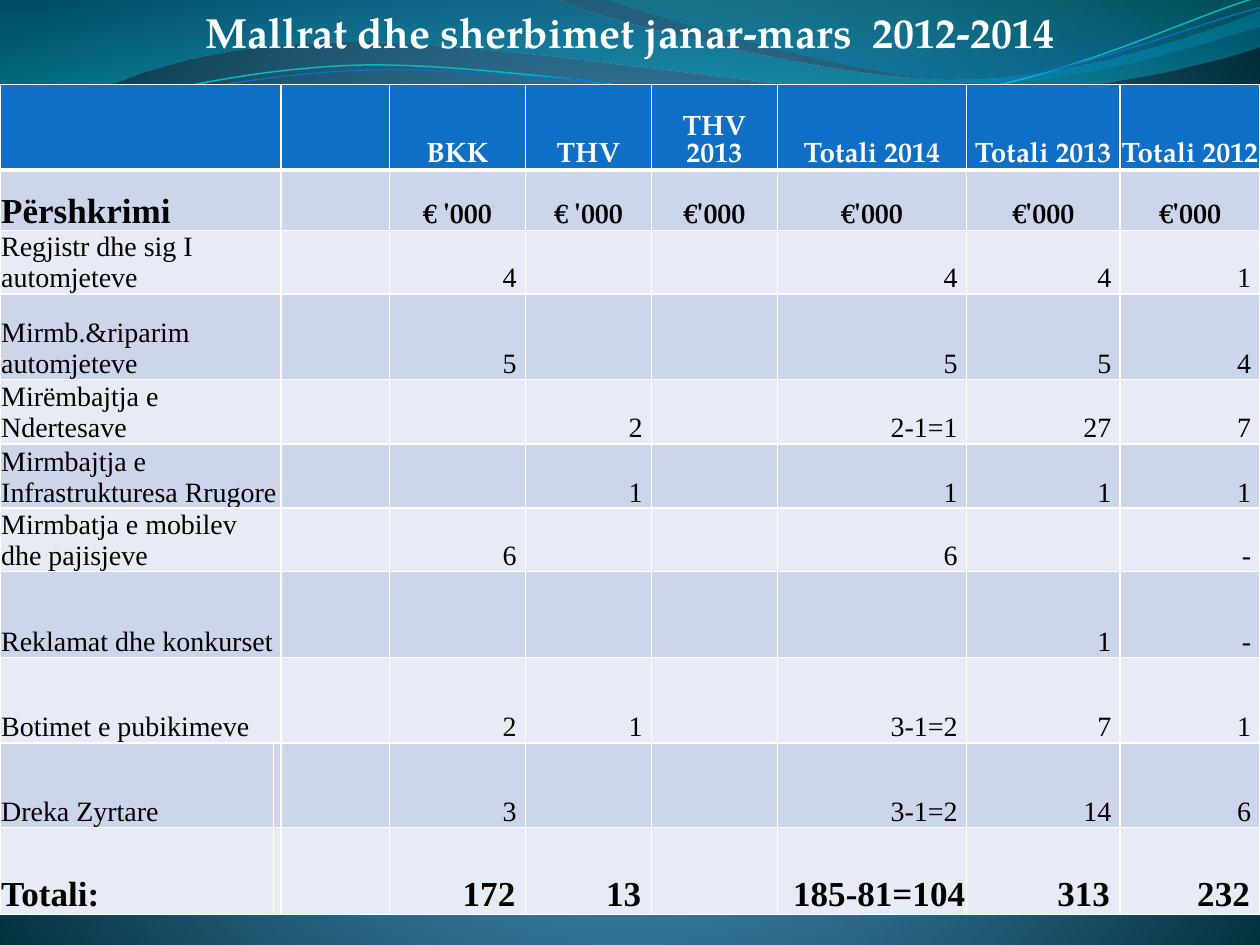
"""Build the slide of goods and services spending, January to March 2012-2014."""
import pptx
import pptx.dml.color
import pptx.enum.text
import pptx.oxml
import pptx.oxml.ns
import pptx.util
from lxml import etree

WIDTH, HEIGHT = 10, 7.5
UNITS_PER_INCH = 1000
HEADING_FONT, BODY_FONT = "TeX Gyre Pagella", "Times New Roman"
HEADER_FILL, BANDS = "0F6FC6", ("E7EBF5", "CCD5EA")
COLUMNS = [2.17, 0.06, 0.86, 1.08, 1, 1, 1.5, 1.22, 1.11]
ROWS = [0.68, 0.48, 0.5, 0.68, 0.51, 0.51, 0.5, 0.68, 0.68, 0.67, 0.69]
LABEL_SPAN_ROWS = 9
SPENDING = [
    ["", "BKK", "THV", "THV 2013", "Totali 2014", "Totali 2013", "Totali 2012"],
    ["Përshkrimi", "€ '000", "€ '000", "€'000", "€'000", "€'000", "€'000"],
    ["Regjistr dhe sig I automjeteve", "4", "", "", "4", "4", "1"],
    ["Mirmb.&riparim automjeteve", "5", "", "", "5", "5", "4"],
    ["Mirëmbajtja e Ndertesave", "", "2", "", "2-1=1", "27", "7"],
    ["Mirmbajtja e Infrastrukturesa Rrugore", "", "1", "", "1", "1", "1"],
    ["Mirmbatja e mobilev dhe pajisjeve", "6", "", "", "6", "", "-"],
    ["Reklamat dhe konkurset", "", "", "", "", "1", "-"],
    ["Botimet e pubikimeve", "2", "1", "", "3-1=2", "7", "1"],
    ["Dreka Zyrtare", "3", "", "", "3-1=2", "14", "6"],
    ["Totali:", "172", "13", "", "185-81=104", "313", "232"],
]
BROAD_WAVE = [
    [(0, 0)], [(4.4, -0.01)],
    [(4.76, 0.17), (6.64, 0.63), (7.58, 0.63)],
    [(8.53, 0.63), (9.58, 0.26), (10, 0.09)], [(10.01, 0.36)],
    [(9.83, 0.44), (8.7, 0.76), (7.46, 0.75)],
    [(6.22, 0.75), (3.82, 0.28), (2.57, 0.34)],
    [(1.29, 0.36), (0.46, 0.83), (-0.01, 1.13)],
]
RIGHT_WAVE = [
    [(4.79, -0.01)],
    [(5.09, 0.11), (6.82, 0.62), (7.69, 0.65)],
    [(8.56, 0.69), (9.61, 0.32), (10, 0.21)], [(10, 0)],
]
TEAL_STRAND = [
    [(0, 1.11)],
    [(0.48, 0.93), (1.58, 0.57), (2.77, 0.52)],
    [(3.95, 0.47), (5.93, 0.89), (7.13, 0.8)],
    [(8.33, 0.71), (9.38, 0.15), (9.98, -0.02)],
]
BLUE_STRAND = [
    [(0, 1.04)],
    [(0.47, 0.96), (1.64, 0.61), (2.83, 0.56)],
    [(4.03, 0.51), (5.97, 0.84), (7.17, 0.75)],
    [(8.36, 0.67), (9.41, 0.21), (10, 0.06)],
]


def rgb(colour):
    """Turn a hex string into a colour."""
    return pptx.dml.color.RGBColor.from_string(colour)


def set_gradient(fill, owner, stops, direction):
    """Give a fill its stops (share, colour, opacity) and direction."""
    fill.gradient()
    gradient = next(owner.iter(pptx.oxml.ns.qn("a:gradFill")))
    marks = "".join(
        f'<a:gs pos="{share * 1000}"><a:srgbClr val="{colour}">'
        f'<a:alpha val="{opacity * 1000}"/></a:srgbClr></a:gs>'
        for share, colour, opacity in stops)
    gradient[:] = list(pptx.oxml.parse_xml(
        f'<a:gradFill {pptx.oxml.ns.nsdecls("a")}>'
        f"<a:gsLst>{marks}</a:gsLst>{direction}</a:gradFill>"))


def add_curve(slide, segments, closed):
    """Draw an outline of lines and cubic curves."""
    ends = [(x * UNITS_PER_INCH, y * UNITS_PER_INCH) for x, y in (s[-1] for s in segments)]
    builder = slide.shapes.build_freeform(
        *ends[0], scale=pptx.util.Inches(1) / UNITS_PER_INCH)
    builder.add_line_segments(ends[1:], close=closed)
    curve = builder.convert_to_shape()
    curve.shadow.inherit = False
    left, top = (min(axis) for axis in zip(*ends))
    lines = list(curve.element.iter(pptx.oxml.ns.qn("a:lnTo")))
    for line, segment in zip(lines, segments[1:]):
        if len(segment) == 3:
            bend = etree.Element(pptx.oxml.ns.qn("a:cubicBezTo"))
            for x, y in segment:
                etree.SubElement(bend, pptx.oxml.ns.qn("a:pt"),
                                 x=str(round(x * UNITS_PER_INCH - left)),
                                 y=str(round(y * UNITS_PER_INCH - top)))
            line.getparent().replace(line, bend)
    return curve


def add_wave(slide, segments, stops):
    """Draw a translucent wave."""
    wave = add_curve(slide, segments, True)
    wave.line.fill.background()
    set_gradient(wave.fill, wave.element, stops, '<a:lin ang="5400000" scaled="1"/>')


def add_strand(slide, segments, colour, weight):
    """Draw a thin curved line."""
    strand = add_curve(slide, segments, False)
    strand.fill.background()
    strand.line.color.rgb = rgb(colour)
    strand.line.width = pptx.util.Pt(weight)


def style_text(frame, size, font, colour, bold, alignment):
    """Format every paragraph and run of a text frame."""
    for paragraph in frame.paragraphs:
        paragraph.alignment = alignment
        for run in paragraph.runs:
            run.font.size = pptx.util.Pt(size)
            run.font.name = font
            run.font.bold = bold
            run.font.color.rgb = rgb(colour)


def style_cell(cell, fill, row):
    """Fill a cell, set its insets and rule its four sides in white."""
    cell.fill.solid()
    cell.fill.fore_color.rgb = rgb(fill)
    cell.vertical_anchor = pptx.enum.text.MSO_ANCHOR.BOTTOM
    cell.margin_left = cell.margin_right = cell.margin_top = pptx.util.Inches(0.01)
    cell.margin_bottom = 0
    weights = {"L": 1, "R": 1, "T": 3 if row == 1 else 1, "B": 3 if row == 0 else 1}
    properties = cell._tc.get_or_add_tcPr()
    for place, (side, weight) in enumerate(weights.items()):
        border = etree.Element(pptx.oxml.ns.qn(f"a:ln{side}"), w=str(pptx.util.Pt(weight)))
        solid = etree.SubElement(border, pptx.oxml.ns.qn("a:solidFill"))
        etree.SubElement(solid, pptx.oxml.ns.qn("a:srgbClr"), val="FFFFFF")
        properties.insert(place, border)


def write_cell(cell, text, row, is_label):
    """Write a label, a column heading or an amount."""
    heading, total = row < 2, row == len(ROWS) - 1
    align = pptx.enum.text.PP_ALIGN
    alignment = align.LEFT if is_label else align.CENTER if heading else align.RIGHT
    if alignment == align.RIGHT and not (total and "=" in text):
        cell.margin_right = pptx.util.Inches(0.08 if total else 0.07)
    cell.text_frame.text = text
    style_text(cell.text_frame, 20 if total or (is_label and heading) else 16,
               HEADING_FONT if heading and not is_label else BODY_FONT,
               "000000" if row else "FFFFFF", heading or total, alignment)


def add_spending_table(slide):
    """Add the table of spending by kind and year."""
    inches = pptx.util.Inches
    table = slide.shapes.add_table(len(ROWS), len(COLUMNS), 0, inches(WIDTH * 0.067),
                                   inches(WIDTH), inches(sum(ROWS))).table
    for column, width in zip(table.columns, COLUMNS):
        column.width = inches(width)
    for row, (height, (label, *amounts)) in enumerate(zip(ROWS, SPENDING)):
        table.rows[row].height = inches(height)
        fill = BANDS[row % 2] if row else HEADER_FILL
        for column, text in enumerate([label, "", ""] + amounts):
            cell = table.cell(row, column)
            style_cell(cell, fill, row)
            if text:
                write_cell(cell, text, row, column == 0)
        if row < LABEL_SPAN_ROWS:
            table.cell(row, 0).merge(table.cell(row, 1))


def place_title(slide, text):
    """Set the title across the top, in front of the waves."""
    title = slide.shapes.title
    title.left = title.top = 0
    title.width, title.height = pptx.util.Inches(WIDTH), pptx.util.Inches(HEIGHT / 15)
    frame = title.text_frame
    frame.text = text
    frame.word_wrap = True
    frame.vertical_anchor = pptx.enum.text.MSO_ANCHOR.TOP
    style_text(frame, 24, HEADING_FONT, "FFFFFF", True, pptx.enum.text.PP_ALIGN.CENTER)
    slide.shapes.element.append(title.element)


def main():
    """Build and save the slide."""
    deck = pptx.Presentation()
    deck.slide_width, deck.slide_height = pptx.util.Inches(WIDTH), pptx.util.Inches(HEIGHT)
    slide = deck.slides.add_slide(deck.slide_layouts[5])
    set_gradient(slide.background.fill, slide.element,
                 [(0, "4AA0D6", 100), (25, "4C98C7", 100), (100, "002C38", 100)],
                 '<a:path path="circle"><a:fillToRect l="10000" t="110000" '
                 'r="10000" b="100000"/></a:path>')
    add_wave(slide, BROAD_WAVE, [(0, "0074A1", 45), (100, "00C6CF", 55)])
    add_wave(slide, RIGHT_WAVE, [(0, "00A1A9", 30), (80, "008BBF", 45)])
    add_strand(slide, TEAL_STRAND, "0AB8BF", 0.85)
    add_strand(slide, BLUE_STRAND, "0F6FC6", 0.75)
    add_spending_table(slide)
    place_title(slide, "Mallrat dhe sherbimet janar-mars  2012-2014")
    deck.save("out.pptx")


if __name__ == "__main__":
    main()
